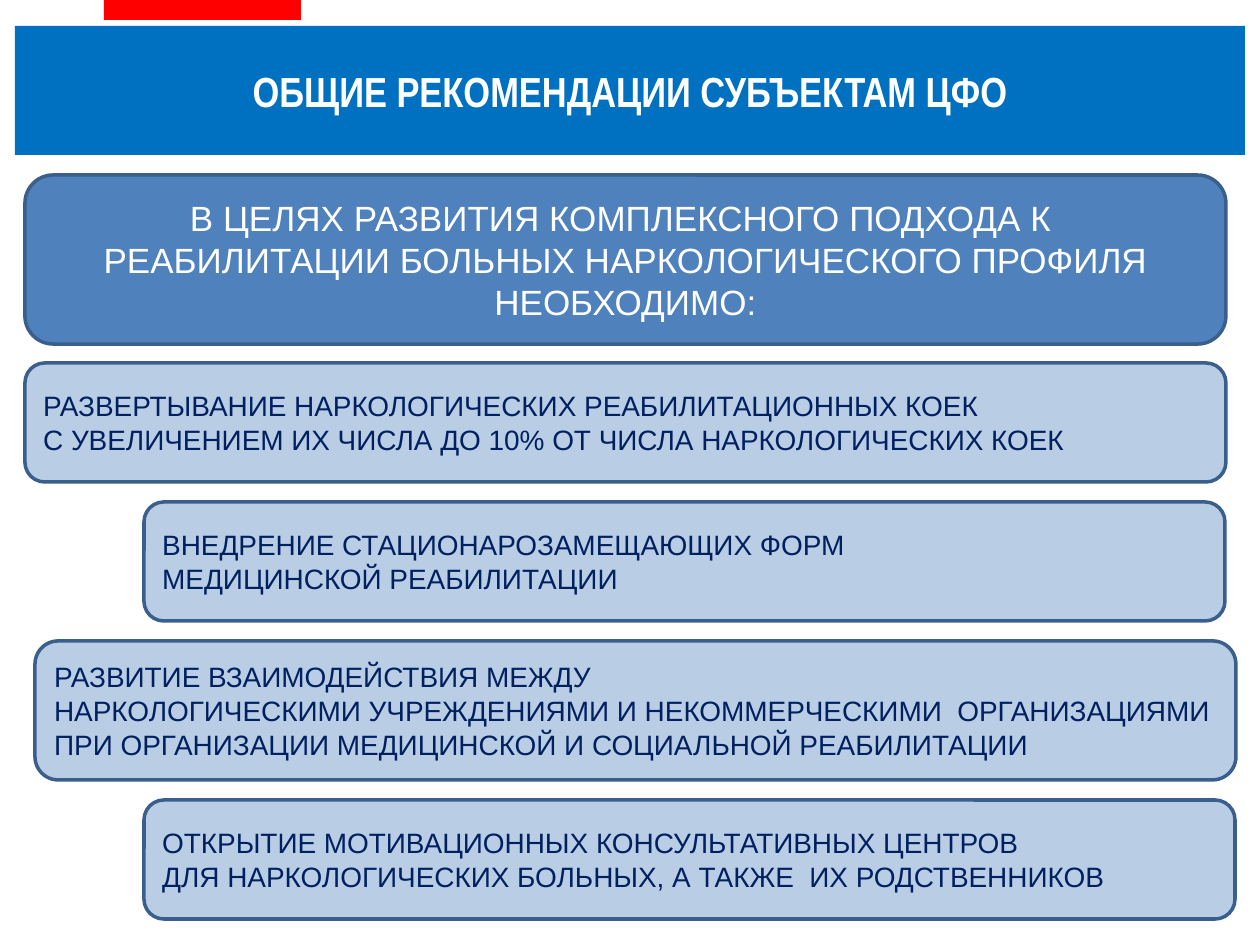
from pptx import Presentation
from pptx.dml.color import RGBColor
from pptx.enum.shapes import MSO_SHAPE
from pptx.enum.text import MSO_ANCHOR, PP_ALIGN
from pptx.util import Emu, Pt

PX = 914400 // 126

WHITE = RGBColor(0xFF, 0xFF, 0xFF)
RED = RGBColor(0xFF, 0x00, 0x00)
BANNER_BLUE = RGBColor(0x00, 0x70, 0xC0)
GOAL_BLUE = RGBColor(0x4F, 0x81, 0xBD)
PALE_BLUE = RGBColor(0xB9, 0xCD, 0xE5)
OUTLINE = RGBColor(0x3A, 0x5F, 0x8C)
NAVY = RGBColor(0x00, 0x20, 0x60)


def add_box(kind, box, fill, outline=None):
    sp = s.shapes.add_shape(kind, *(Emu(v * PX) for v in box))
    sp.shadow.inherit = False
    sp.fill.solid()
    sp.fill.fore_color.rgb = fill
    if outline is None:
        sp.line.fill.background()
    else:
        sp.line.color.rgb = outline
        sp.line.width = Pt(2)
    return sp


def write(sp, lines, size, color, align, font="Arial", bold=False):
    """Fill the shape with one paragraph per line."""
    tf = sp.text_frame
    tf.word_wrap = True
    tf.vertical_anchor = MSO_ANCHOR.MIDDLE
    tf.text = "\n".join(lines)
    for p in tf.paragraphs:
        p.alignment = align
        p.font.name = font
        p.font.size = Pt(size)
        p.font.bold = bold
        p.font.color.rgb = color


prs = Presentation()
prs.slide_width = Emu(1260 * PX)
prs.slide_height = Emu(945 * PX)
s = prs.slides.add_slide(prs.slide_layouts[6])

banner = add_box(MSO_SHAPE.RECTANGLE, (15, 26, 1230, 129), BANNER_BLUE)
write(banner, ["ОБЩИЕ РЕКОМЕНДАЦИИ СУБЪЕКТАМ ЦФО"], 24, WHITE,
      PP_ALIGN.CENTER, font="Arial Narrow", bold=True)

add_box(MSO_SHAPE.RECTANGLE, (104, 0, 197, 20), RED)

goal = add_box(MSO_SHAPE.ROUNDED_RECTANGLE, (25, 175, 1201, 169), GOAL_BLUE, OUTLINE)
write(goal, ["В ЦЕЛЯХ РАЗВИТИЯ КОМПЛЕКСНОГО ПОДХОДА К  РЕАБИЛИТАЦИИ БОЛЬНЫХ "
             "НАРКОЛОГИЧЕСКОГО ПРОФИЛЯ НЕОБХОДИМО:"], 20, WHITE, PP_ALIGN.CENTER)

# left, width, height, lines
recommendations = [
    (25, 1201, 119, ["РАЗВЕРТЫВАНИЕ НАРКОЛОГИЧЕСКИХ РЕАБИЛИТАЦИОННЫХ КОЕК",
                     "С УВЕЛИЧЕНИЕМ ИХ ЧИСЛА ДО 10% ОТ ЧИСЛА НАРКОЛОГИЧЕСКИХ КОЕК"]),
    (144, 1081, 119, ["ВНЕДРЕНИЕ СТАЦИОНАРОЗАМЕЩАЮЩИХ ФОРМ",
                      "МЕДИЦИНСКОЙ РЕАБИЛИТАЦИИ"]),
    (35, 1201, 139, ["РАЗВИТИЕ ВЗАИМОДЕЙСТВИЯ МЕЖДУ",
                     "НАРКОЛОГИЧЕСКИМИ УЧРЕЖДЕНИЯМИ И НЕКОММЕРЧЕСКИМИ  ОРГАНИЗАЦИЯМИ",
                     "ПРИ ОРГАНИЗАЦИИ МЕДИЦИНСКОЙ И СОЦИАЛЬНОЙ РЕАБИЛИТАЦИИ"]),
    (144, 1091, 119, ["ОТКРЫТИЕ МОТИВАЦИОННЫХ КОНСУЛЬТАТИВНЫХ ЦЕНТРОВ",
                      "ДЛЯ НАРКОЛОГИЧЕСКИХ БОЛЬНЫХ, А ТАКЖЕ  ИХ РОДСТВЕННИКОВ"]),
]
GAP = 20
top = 363
for left, width, height, lines in recommendations:
    sp = add_box(MSO_SHAPE.ROUNDED_RECTANGLE, (left, top, width, height), PALE_BLUE, OUTLINE)
    write(sp, lines, 16, NAVY, PP_ALIGN.LEFT)
    top += height + GAP

prs.save("out.pptx")
